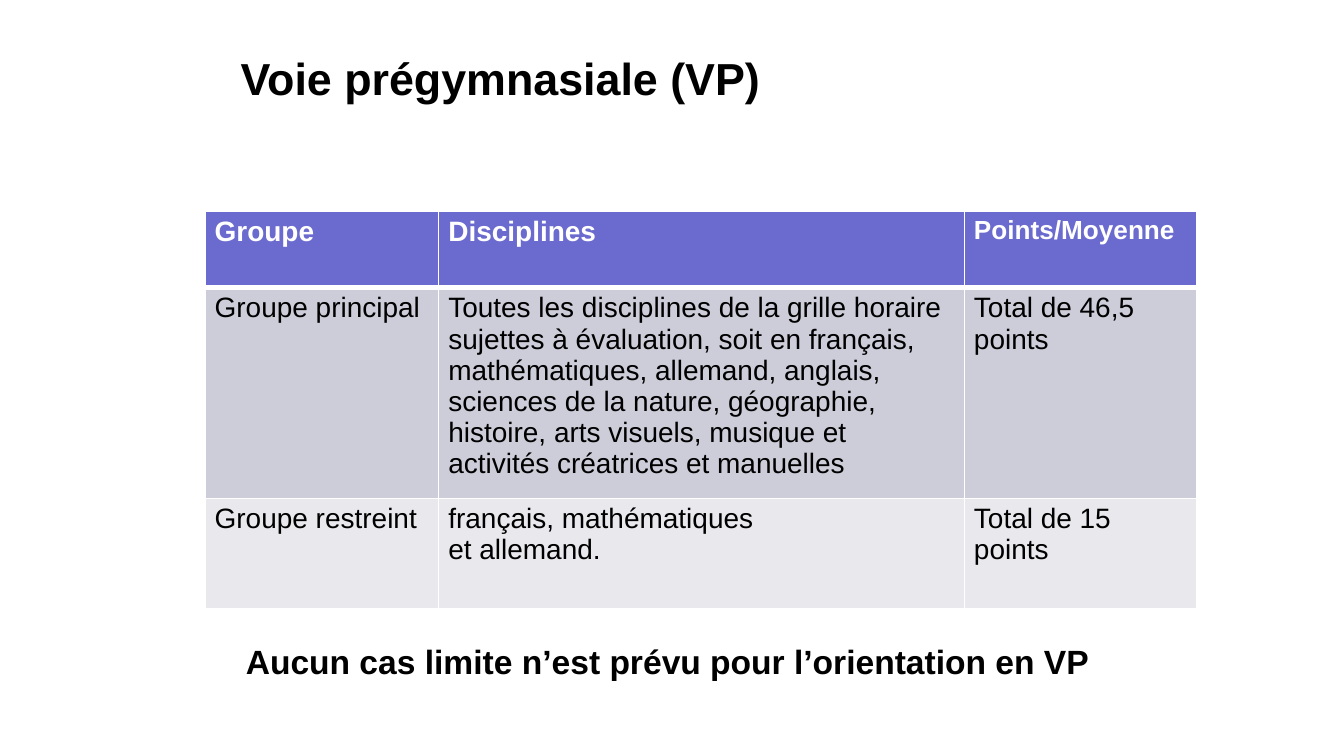
from lxml.etree import SubElement
from pptx import Presentation
from pptx.dml.color import RGBColor as RGB
from pptx.enum.text import MSO_ANCHOR as Anchor, PP_ALIGN as Align
from pptx.oxml.ns import qn
from pptx.util import Pt

HUES = {"ink": "000000", "white": "FFFFFF", "head": "6B6BCF",
        "dark": "CDCDDA", "light": "E8E8ED"}
TITLE = "Voie prégymnasiale (VP)"
NOTE = "Aucun cas limite n’est prévu pour l’orientation en VP"
ROWS = [
    [["Groupe"], ["Disciplines"], ["Points/Moyenne"]],
    [["Groupe principal"],
     ["Toutes les disciplines de la grille horaire sujettes à évaluation, "
      "soit en français, mathématiques, allemand, anglais,",
      "sciences de la nature, géographie, histoire, arts visuels, musique et",
      "activités créatrices et manuelles"],
     ["Total de 46,5 points"]],
    [["Groupe restreint"],
     ["français, mathématiques", "et allemand."],
     ["Total de 15 points"]],
]
FILLS = ["head", "dark", "light"]
WIDTHS = [125.2, 281.6, 124.6]
HEIGHTS = [41.2, 113, 59.2]
RULES = [1, 3, 1, 1]


def write(frame, lines, size, hue, bold):
    frame.word_wrap = True
    for i, line in enumerate(lines):
        para = frame.paragraphs[0] if i == 0 else frame.add_paragraph()
        para.alignment = Align.LEFT
        run = para.add_run()
        run.text = line
        font = run.font
        font.name, font.size, font.bold = "Arial", Pt(size), bold
        font.color.rgb = RGB.from_string(HUES[hue])


def edge(cell, side, width):
    line = SubElement(cell._tc.get_or_add_tcPr(), qn("a:ln" + side), w=str(Pt(width)))
    fill = SubElement(line, qn("a:solidFill"))
    SubElement(fill, qn("a:srgbClr"), val=HUES["white"])


deck = Presentation()
deck.slide_width, deck.slide_height = Pt(720), Pt(405)
slide = deck.slides.add_slide(deck.slide_layouts[5])

title = slide.shapes.title
title.left, title.top, title.width, title.height = Pt(121.7), Pt(20.9), Pt(531.4), Pt(41.8)
title.text_frame.vertical_anchor = Anchor.MIDDLE
write(title.text_frame, [TITLE], 24, "ink", True)

grid = slide.shapes.add_table(len(ROWS), len(WIDTHS), Pt(109.8), Pt(113),
                              Pt(sum(WIDTHS)), Pt(sum(HEIGHTS))).table
for col, width in zip(grid.columns, WIDTHS):
    col.width = Pt(width)
for r, row in enumerate(ROWS):
    grid.rows[r].height = Pt(HEIGHTS[r])
    top = r == 0
    for c, lines in enumerate(row):
        cell = grid.cell(r, c)
        cell.margin_left = cell.margin_right = Pt(5.2)
        cell.margin_top = cell.margin_bottom = Pt(2.6)
        for side, width in zip("LRTB", (1, 1, RULES[r], RULES[r + 1])):
            edge(cell, side, width)
        cell.fill.solid()
        cell.fill.fore_color.rgb = RGB.from_string(HUES[FILLS[r]])
        size = 14 if top and c == 2 else 15
        write(cell.text_frame, lines, size, "white" if top else "ink", top)

note = slide.shapes.add_textbox(Pt(124.6), Pt(338.4), Pt(470.9), Pt(28.8)).text_frame
write(note, [NOTE], 18, "ink", True)
note.paragraphs[0].line_spacing = Pt(23.1)

deck.save("out.pptx")
